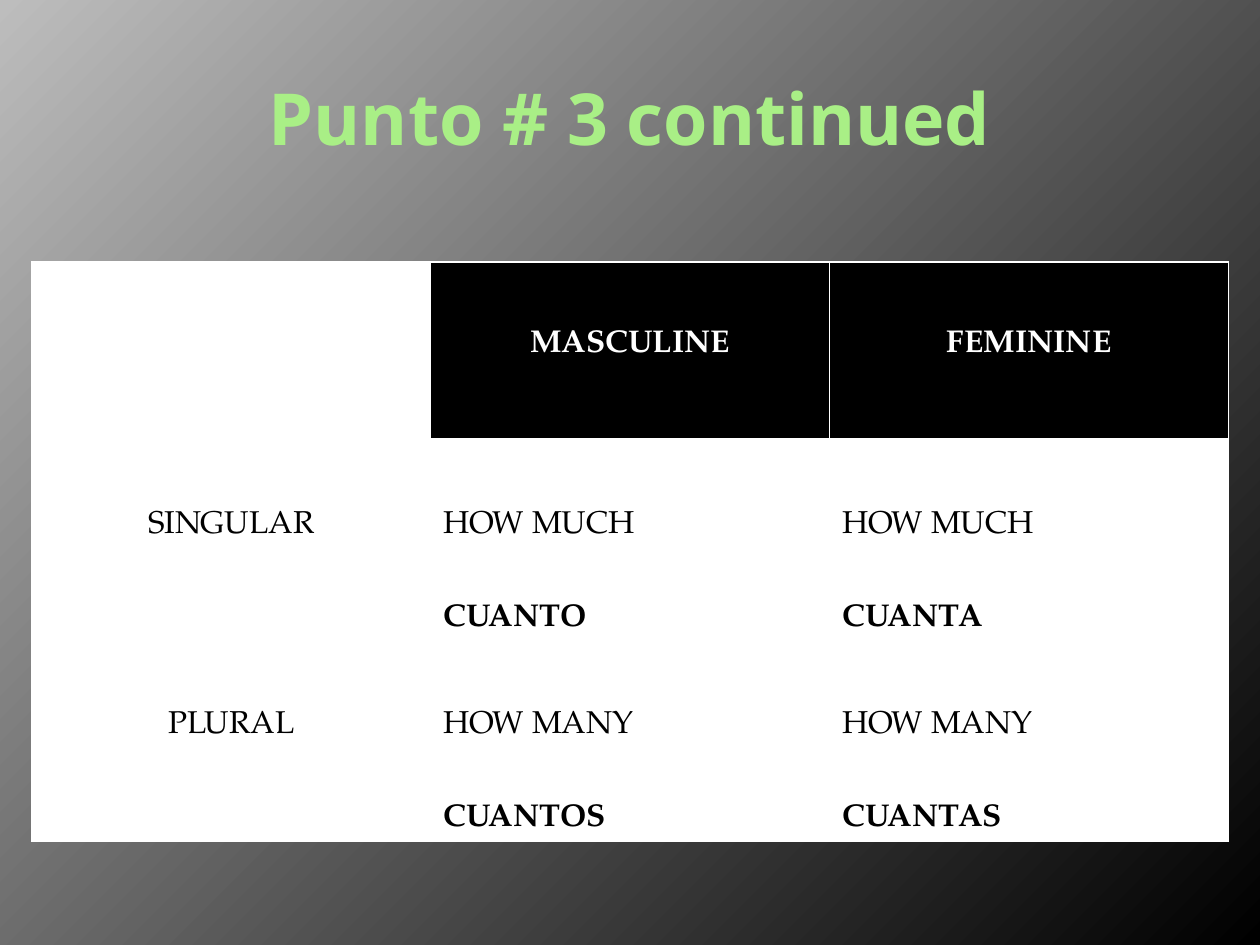
from dataclasses import dataclass
from lxml import etree
from pptx import Presentation
from pptx.dml.color import RGBColor as RGB
from pptx.enum.text import MSO_ANCHOR as Anchor, PP_ALIGN as Align
from pptx.oxml.ns import qn
from pptx.util import Cm, Pt


@dataclass
class Theme:
    white: str = "FFFFFF"
    black: str = "000000"
    gray: str = "BDBDBD"
    green: str = "A9EF86"
    head: str = "Noto Sans"
    body: str = "TeX Gyre Pagella"
    big: int = 41
    small: int = 18


theme = Theme()


def write(para, text, font=theme.body, size=theme.small, color=theme.black,
          bold=False, align=Align.LEFT, space=None):
    para.alignment = align
    if space:
        para.line_spacing = space
    run = para.add_run()
    run.text = text
    run.font.name = font
    run.font.size = Pt(size)
    run.font.bold = bold
    run.font.color.rgb = RGB.from_string(color)


def edge(cell, color, sides):
    props = cell._tc.get_or_add_tcPr()
    for i, (side, width) in enumerate(sides.items()):
        line = etree.Element(qn(f"a:ln{side}"), w=str(Pt(width)))
        fill = etree.SubElement(line, qn("a:solidFill"))
        etree.SubElement(fill, qn("a:srgbClr"), val=color)
        props.insert(i, line)


deck = Presentation()
deck.slide_width, deck.slide_height = Cm(25.4), Cm(19.05)
slide = deck.slides.add_slide(deck.slide_layouts[5])

# Background: diagonal fade
back = slide.background.fill
back.gradient()
back.gradient_angle = 315
for stop, color in zip(back.gradient_stops, (theme.gray, theme.black)):
    stop.color.rgb = RGB.from_string(color)

# Title
title = slide.shapes.title
title.left, title.top = Cm(1.27), Cm(0.76)
title.width, title.height = Cm(22.86), Cm(3.18)
title.text_frame.vertical_anchor = Anchor.MIDDLE
write(title.text_frame.paragraphs[0], "Punto # 3 continued", font=theme.head,
      size=theme.big, color=theme.green, bold=True, align=Align.CENTER)

# Table: each cell is a list of lines
rows = [
    [[], ["MASCULINE"], ["FEMININE"]],
    [["SINGULAR"], ["HOW MUCH", "CUANTO"], ["HOW MUCH", "CUANTA"]],
    [["PLURAL"], ["HOW MANY", "CUANTOS"], ["HOW MANY", "CUANTAS"]],
]
tall = [Cm(3.6), Cm(3.8), Cm(3.6)]
grid = slide.shapes.add_table(3, 3, Cm(0.64), Cm(5.28), Cm(24.13), sum(tall)).table
for row, high in zip(grid.rows, tall):
    row.height = high

for r, row in enumerate(rows):
    for c, lines in enumerate(row):
        cell = grid.cell(r, c)
        dark = r == 0 and c > 0
        cell.fill.solid()
        cell.fill.fore_color.rgb = RGB.from_string(theme.black if dark else theme.white)
        edge(cell, theme.white, {"L": 1, "R": 1, "T": 1, "B": 1 if r else 3})
        frame = cell.text_frame
        for i, text in enumerate(lines):
            para = frame.add_paragraph() if i else frame.paragraphs[0]
            write(para, text, color=theme.white if dark else theme.black,
                  bold=dark or i > 0, space=3.0,
                  align=Align.CENTER if r == 0 or c == 0 else Align.LEFT)

deck.save("out.pptx")
